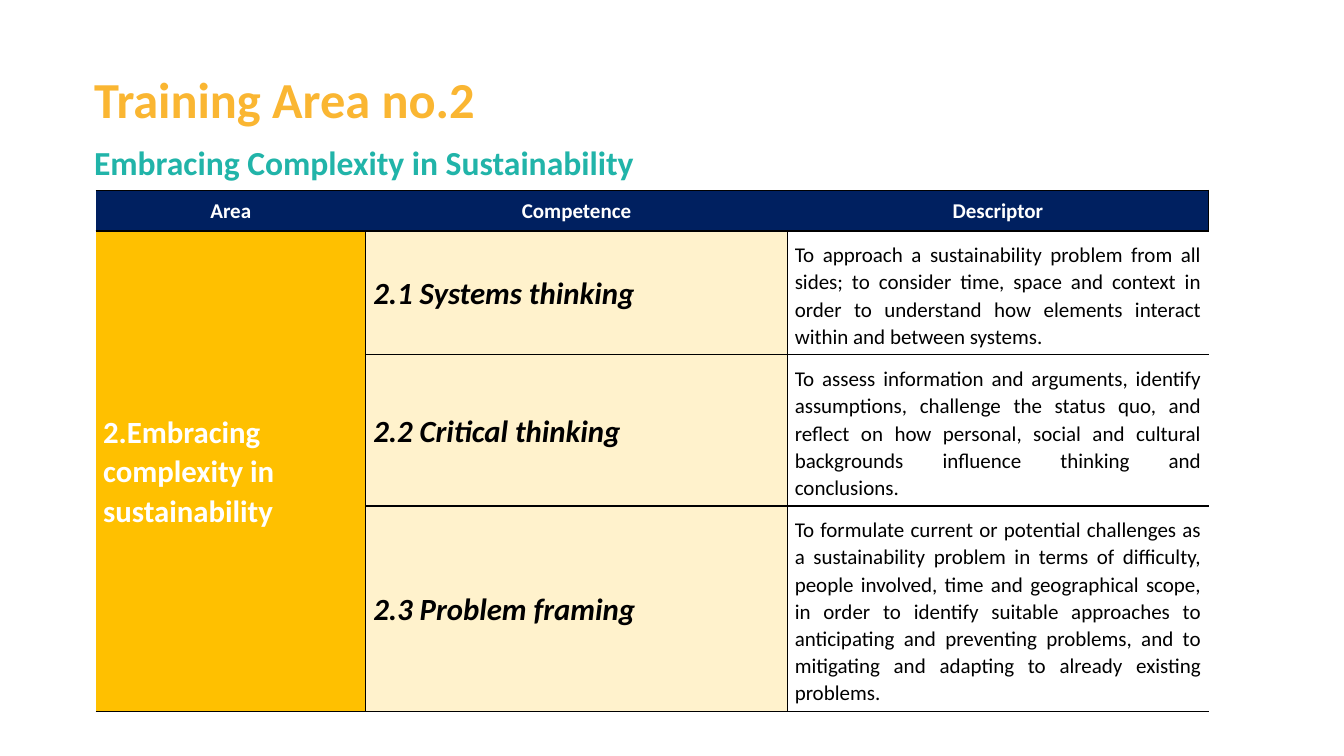
"""Build the slide that lists the competences of training area no. 2."""
from lxml import etree
from pptx import Presentation
from pptx.dml.color import RGBColor
from pptx.enum.text import MSO_ANCHOR, PP_ALIGN
from pptx.oxml.ns import qn
from pptx.util import Cm, Pt

LEFT, CENTER, JUSTIFY = PP_ALIGN.LEFT, PP_ALIGN.CENTER, PP_ALIGN.JUSTIFY
TOP, MIDDLE = MSO_ANCHOR.TOP, MSO_ANCHOR.MIDDLE

TITLE = "Training Area no.2"
SUBTITLE = "Embracing Complexity in Sustainability"
HEADERS = ["Area", "Competence", "Descriptor"]
AREA = "2.Embracing complexity in sustainability"
COMPETENCES = [
    ("2.1 Systems thinking",
     "To approach a sustainability problem from all sides; to consider time, "
     "space and context in order to understand how elements interact within "
     "and between systems."),
    ("2.2 Critical thinking",
     "To assess information and arguments, identify assumptions, challenge "
     "the status quo, and reflect on how personal, social and cultural "
     "backgrounds influence thinking and conclusions."),
    ("2.3 Problem framing",
     "To formulate current or potential challenges as a sustainability "
     "problem in terms of difficulty, people involved, time and geographical "
     "scope, in order to identify suitable approaches to anticipating and "
     "preventing problems, and to mitigating and adapting to already existing "
     "problems."),
]

COLORS = {"title": "FAB632", "subtitle": "21B4A9", "header": "002060",
          "area": "FFC000", "competence": "FFF2CC", "light": "FFFFFF",
          "dark": "000000"}
FONT = "Calibri"
TABLE_LEFT, HEADER_TOP, HEADER_HEIGHT = 2.41, 4.8, 1.02
COL_WIDTHS = [6.81, 10.62, 10.62]
ROW_HEIGHTS = [3.12, 3.81, 5.17]


def write(tf, text, size=15, color="dark", bold=False, italic=False,
          align=LEFT, spacing=1.0, anchor=MIDDLE):
    """Put one formatted paragraph into a text frame."""
    tf.word_wrap = True
    tf.vertical_anchor = anchor
    p = tf.paragraphs[0]
    p.alignment, p.line_spacing = align, spacing
    r = p.add_run()
    r.text = text
    r.font.name, r.font.size = FONT, Pt(size)
    r.font.bold, r.font.italic = bold, italic
    r.font.color.rgb = RGBColor.from_string(COLORS[color])


def fill_cell(cell, text, fill=None, borders="", top=0, bottom=0, **fmt):
    """Set borders, fill, margins and text of a table cell."""
    tc_pr = cell._tc.get_or_add_tcPr()
    for side in "LRTB":
        ln = etree.SubElement(tc_pr, qn(f"a:ln{side}"), w=str(Pt(1)))
        if side in borders:
            solid = etree.SubElement(ln, qn("a:solidFill"))
            etree.SubElement(solid, qn("a:srgbClr"), val=COLORS["dark"])
        else:
            etree.SubElement(ln, qn("a:noFill"))
    if fill:
        cell.fill.solid()
        cell.fill.fore_color.rgb = RGBColor.from_string(COLORS[fill])
    else:
        cell.fill.background()
    cell.margin_left = cell.margin_right = Cm(0.19)
    cell.margin_top, cell.margin_bottom = Cm(top), Cm(bottom)
    if text:
        write(cell.text_frame, text, spacing=1.06, **fmt)
        cell.vertical_anchor = MIDDLE


def add_grid(s, top, heights):
    """Add a plain table with the shared columns."""
    table = s.shapes.add_table(
        len(heights), len(COL_WIDTHS), Cm(TABLE_LEFT), Cm(top),
        Cm(sum(COL_WIDTHS)), Cm(sum(heights))).table
    table.first_row = table.horz_banding = False
    for col, width in zip(table.columns, COL_WIDTHS):
        col.width = Cm(width)
    for row, height in zip(table.rows, heights):
        row.height = Cm(height)
    return table


def main():
    """Build and save the slide."""
    prs = Presentation()
    prs.slide_width, prs.slide_height = Cm(33.87), Cm(19.05)
    s = prs.slides.add_slide(prs.slide_layouts[5])

    title = s.shapes.title
    title.left, title.top = Cm(2.12), Cm(1.6)
    title.width, title.height = Cm(22.8), Cm(1.8)
    write(title.text_frame, TITLE, size=36, color="title", bold=True,
          anchor=TOP)
    sp = s.shapes.add_textbox(Cm(2.12), Cm(3.46), Cm(21.35), Cm(1.28))
    write(sp.text_frame, SUBTITLE, size=24, color="subtitle", bold=True,
          anchor=TOP)

    body = add_grid(s, HEADER_TOP + HEADER_HEIGHT, ROW_HEIGHTS)
    for i, (competence, descriptor) in enumerate(COMPETENCES):
        fill_cell(body.cell(i, 0), "" if i else AREA, fill="area",
                  borders="TRB", size=22, color="light", bold=True)
        fill_cell(body.cell(i, 1), competence, fill="competence",
                  borders="LRTB", size=22, bold=True, italic=True,
                  align=JUSTIFY)
        fill_cell(body.cell(i, 2), descriptor, borders="LTB", top=0.24,
                  bottom=0.1, align=JUSTIFY)
    body.cell(0, 0).merge(body.cell(len(COMPETENCES) - 1, 0))

    header = add_grid(s, HEADER_TOP, [HEADER_HEIGHT])
    for j, text in enumerate(HEADERS):
        fill_cell(header.cell(0, j), text, fill="header",
                  borders="TRB" if text == HEADERS[-1] else "TB",
                  color="light", bold=True, align=CENTER)
    prs.save("out.pptx")


if __name__ == "__main__":
    main()
